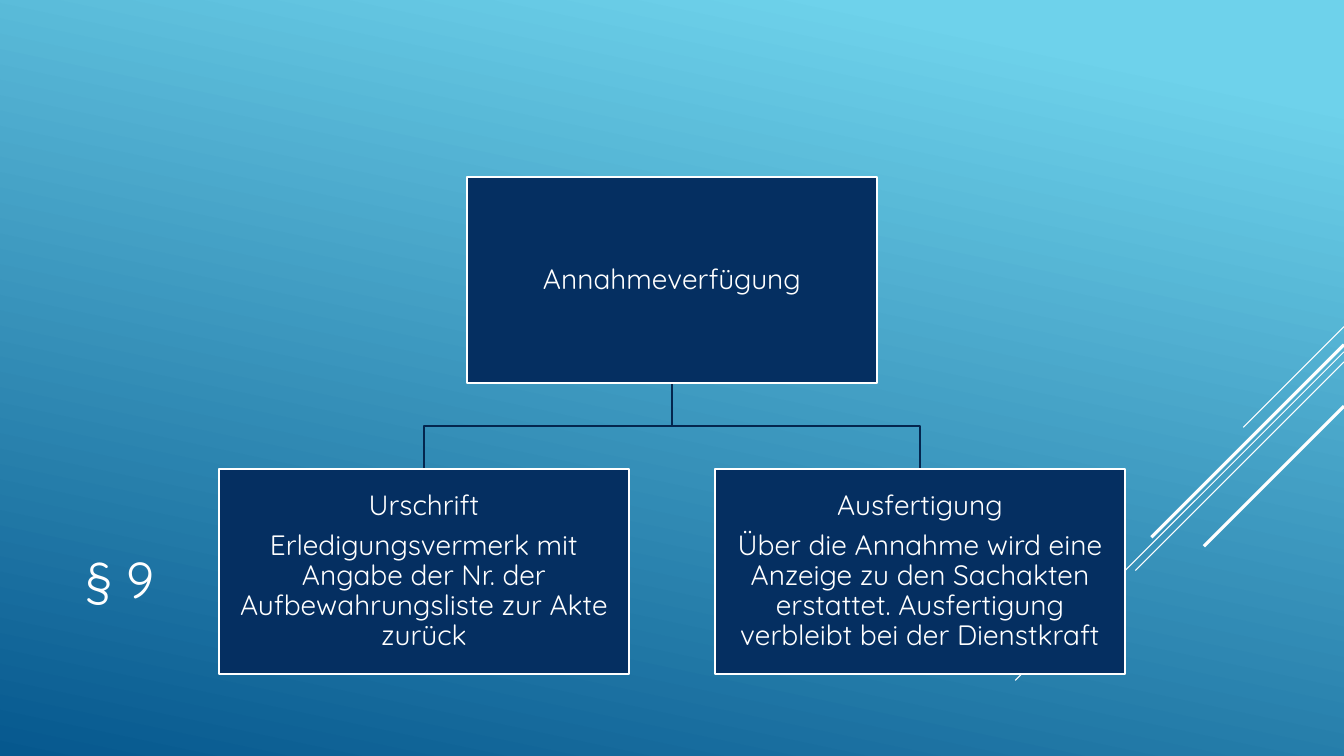
from dataclasses import dataclass

from lxml import etree
from pptx import Presentation
from pptx.dml.color import RGBColor
from pptx.enum.shapes import MSO_CONNECTOR, MSO_SHAPE
from pptx.enum.text import MSO_ANCHOR, PP_ALIGN
from pptx.oxml.ns import qn
from pptx.util import Inches, Pt

RECTANGLE = MSO_SHAPE.RECTANGLE
STRAIGHT = MSO_CONNECTOR.STRAIGHT
MIDDLE = MSO_ANCHOR.MIDDLE
LEFT = PP_ALIGN.LEFT
CENTER = PP_ALIGN.CENTER
TITLE_ONLY = 5


@dataclass(frozen=True)
class Theme:
    font: str = "Quicksand"
    text: RGBColor = RGBColor(0xFF, 0xFF, 0xFF)
    box: RGBColor = RGBColor(0x05, 0x2F, 0x61)
    branch: RGBColor = RGBColor(0x04, 0x26, 0x4E)
    sky: RGBColor = RGBColor(0x6E, 0xD2, 0xEB)
    deep: RGBColor = RGBColor(0x06, 0x58, 0x8E)
    title_size: Pt = Pt(36)
    box_size: Pt = Pt(20)
    outline: Pt = Pt(1.25)


THEME = Theme()
SLIDE_WIDTH, SLIDE_HEIGHT = 13.33, 7.5
BOX_WIDTH, BOX_HEIGHT = 4.07, 2.04
ROOT_CENTER, ROOT_TOP = 6.665, 1.76
CHILD_TOP = 4.65
CHILD_OFFSET = 2.46

ROOT_TEXT = ["Annahmeverfügung"]
CHILD_TEXTS = [
    ["Urschrift",
     "Erledigungsvermerk mit Angabe der Nr. der Aufbewahrungsliste zur Akte zurück"],
    ["Ausfertigung",
     "Über die Annahme wird eine Anzeige zu den Sachakten erstattet. "
     "Ausfertigung verbleibt bei der Dienstkraft"],
]
DIAGONALS = [
    (3.24, 1.0, 0.75),
    (3.49, 3.26, 0.75),
    (3.59, 2.07, 0.75),
    (3.42, 1.91, 2.25),
    (4.03, 1.39, 2.25),
]


def paint_background(slide):
    fill = slide.background.fill
    fill.gradient()
    fill.gradient_angle = 258
    stops = [(0.1, THEME.sky), (1.0, THEME.deep)]
    for stop, (position, color) in zip(fill.gradient_stops, stops):
        stop.position = position
        stop.color.rgb = color


def add_diagonal(slide, top, reach, weight):
    connector = slide.shapes.add_connector(
        STRAIGHT, Inches(SLIDE_WIDTH), Inches(top),
        Inches(SLIDE_WIDTH - reach), Inches(top + reach))
    connector.line.color.rgb = THEME.text
    connector.line.width = Pt(weight)
    etree.SubElement(connector.element.spPr, qn("a:effectLst"))


def add_run(paragraph, text, size):
    run = paragraph.add_run()
    run.text = text
    run.font.name = THEME.font
    run.font.size = size
    run.font.color.rgb = THEME.text


def set_title(slide, text):
    title = slide.shapes.title
    title.left, title.top = Inches(0.75), Inches(4.91)
    title.width, title.height = Inches(9.33), Inches(1.65)
    title.text_frame.vertical_anchor = MIDDLE
    paragraph = title.text_frame.paragraphs[0]
    paragraph.alignment = LEFT
    add_run(paragraph, text, THEME.title_size)


def add_branch(slide, child_center):
    top = ROOT_TOP + BOX_HEIGHT
    middle = (top + CHILD_TOP) / 2
    builder = slide.shapes.build_freeform(Inches(ROOT_CENTER), Inches(top))
    corners = [(ROOT_CENTER, middle), (child_center, middle), (child_center, CHILD_TOP)]
    builder.add_line_segments([(Inches(x), Inches(y)) for x, y in corners], close=False)
    branch = builder.convert_to_shape()
    branch.shadow.inherit = False
    branch.fill.background()
    branch.line.color.rgb = THEME.branch
    branch.line.width = THEME.outline


def add_box(slide, center, top, texts):
    box = slide.shapes.add_shape(
        RECTANGLE, Inches(center - BOX_WIDTH / 2), Inches(top),
        Inches(BOX_WIDTH), Inches(BOX_HEIGHT))
    box.shadow.inherit = False
    box.fill.solid()
    box.fill.fore_color.rgb = THEME.box
    box.line.color.rgb = THEME.text
    box.line.width = THEME.outline
    frame = box.text_frame
    frame.word_wrap = True
    frame.vertical_anchor = MIDDLE
    frame.margin_left = frame.margin_right = Inches(0.12)
    frame.margin_top = frame.margin_bottom = Inches(0.01)
    for index, text in enumerate(texts):
        paragraph = frame.add_paragraph() if index else frame.paragraphs[0]
        paragraph.alignment = CENTER
        paragraph.line_spacing = 0.9
        paragraph.space_after = Pt(7)
        add_run(paragraph, text, THEME.box_size)


def main():
    presentation = Presentation()
    presentation.slide_width = Inches(SLIDE_WIDTH)
    presentation.slide_height = Inches(SLIDE_HEIGHT)
    slide = presentation.slides.add_slide(presentation.slide_layouts[TITLE_ONLY])
    paint_background(slide)
    for top, reach, weight in DIAGONALS:
        add_diagonal(slide, top, reach, weight)
    set_title(slide, "§ 9")
    child_centers = [ROOT_CENTER - CHILD_OFFSET, ROOT_CENTER + CHILD_OFFSET]
    for center in child_centers:
        add_branch(slide, center)
    add_box(slide, ROOT_CENTER, ROOT_TOP, ROOT_TEXT)
    for center, texts in zip(child_centers, CHILD_TEXTS):
        add_box(slide, center, CHILD_TOP, texts)
    presentation.save("out.pptx")


if __name__ == "__main__":
    main()
